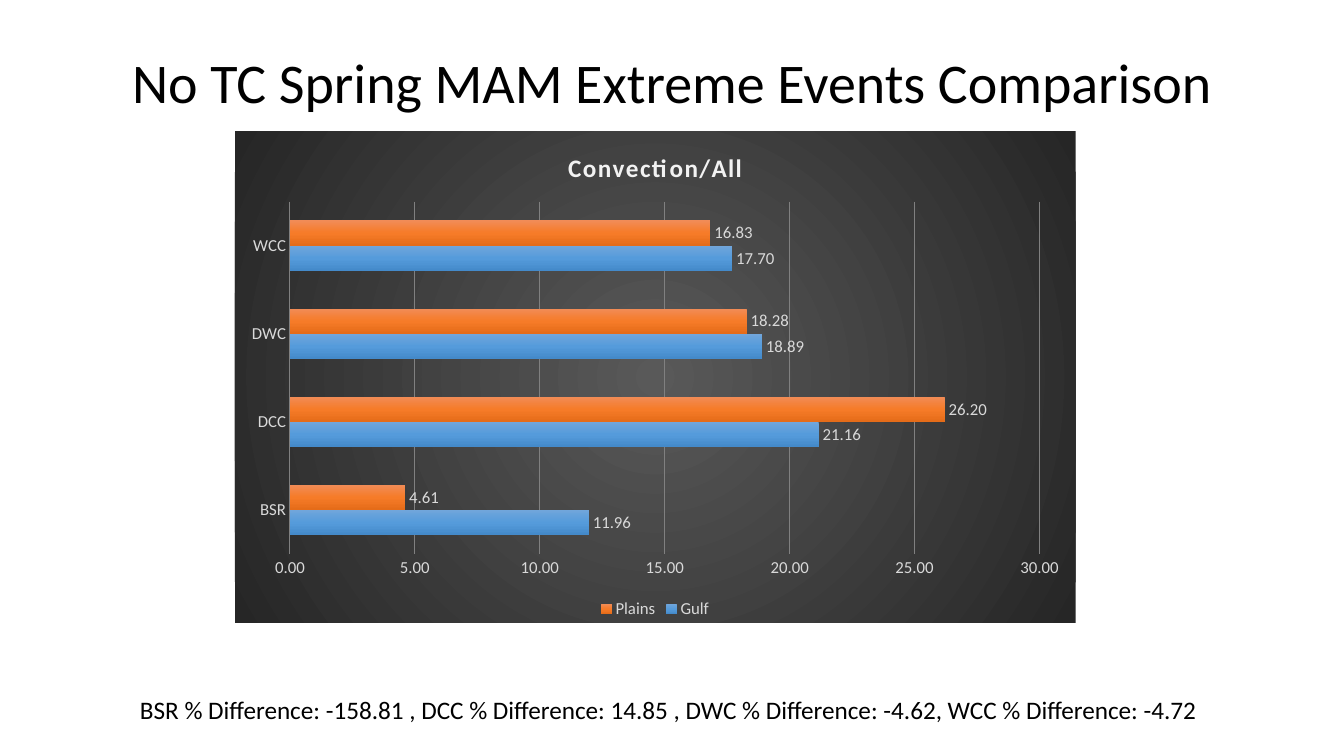
"""Build a slide comparing extreme spring events for Gulf and Plains."""
from dataclasses import dataclass

from lxml import etree
from pptx import Presentation
from pptx.chart import data as cd
from pptx.dml.color import RGBColor
from pptx.enum import chart as ce, text as te
from pptx.oxml import ns, parse_xml
from pptx.util import Pt

FONT = "Calibri"
LIGHT = "D9D9D9"
CATEGORIES = ("BSR", "DCC", "DWC", "WCC")
LINEAR = '<a:lin ang="5400000" scaled="0"/>'
RADIAL = '<a:path path="circle"><a:fillToRect l="50000" t="50000" r="50000" b="50000"/></a:path>'


@dataclass
class Region:
    name: str
    values: tuple[float, ...]
    colors: tuple[str, ...]


REGIONS = (
    Region("Gulf", (11.96, 21.16, 18.89, 17.70), ("71A6DB", "559BDB", "448ACA")),
    Region("Plains", (4.61, 26.20, 18.28, 16.83), ("F18C57", "F67B28", "E56C19")),
)


def color(value: str) -> RGBColor:
    return RGBColor.from_string(value)


def set_font(font, size: float, value: str, bold: bool = False) -> None:
    font.name, font.size, font.bold = FONT, Pt(size), bold
    font.color.rgb = color(value)


def gradient(colors: tuple[str, ...], direction: str) -> etree._Element:
    step = 100000 // (len(colors) - 1)
    stops = "".join(f'<a:gs pos="{i * step}"><a:srgbClr val="{c}"/></a:gs>'
                    for i, c in enumerate(colors))
    return parse_xml(f'<a:gradFill {ns.nsdecls("a")} rotWithShape="1">'
                     f'<a:gsLst>{stops}</a:gsLst>{direction}</a:gradFill>')


def add_text(s, text: str, *, left: float, top: float, width: float, height: float,
             size: float, align=te.PP_ALIGN.LEFT, anchor=te.MSO_ANCHOR.TOP,
             wrap: bool = True, spacing: float = 1.0) -> None:
    tf = s.shapes.add_textbox(Pt(left), Pt(top), Pt(width), Pt(height)).text_frame
    tf.word_wrap, tf.vertical_anchor = wrap, anchor
    p = tf.paragraphs[0]
    p.alignment, p.line_spacing = align, spacing
    r = p.add_run()
    r.text = text
    set_font(r.font, size, "000000")


def style_axis(axis) -> None:
    axis.major_tick_mark = axis.minor_tick_mark = ce.XL_TICK_MARK.NONE
    axis.format.line.fill.background()
    set_font(axis.tick_labels.font, 12, LIGHT)


def add_title(chart, text: str) -> None:
    chart.has_title = True
    r = chart.chart_title.text_frame.paragraphs[0].add_run()
    r.text = text
    set_font(r.font, 18, "F2F2F2", bold=True)
    r.font._element.set("spc", "100")


def style_series(series, region: Region) -> None:
    series.format.line.fill.background()
    bar = series._element.find(ns.qn("c:spPr"))
    bar.insert(0, gradient(region.colors, LINEAR))
    labels = series.data_labels
    labels.show_value = True
    labels.number_format, labels.number_format_is_linked = "0.00", False
    labels.position = ce.XL_LABEL_POSITION.OUTSIDE_END
    set_font(labels.font, 12, LIGHT)


def add_bars(s) -> None:
    data = cd.CategoryChartData(number_format="0.00")
    data.categories = CATEGORIES
    for region in REGIONS:
        data.add_series(region.name, region.values)
    chart = s.shapes.add_chart(ce.XL_CHART_TYPE.BAR_CLUSTERED, Pt(167.8), Pt(93.6),
                               Pt(600.5), Pt(351.4), data).chart
    set_font(chart.font, 10, "000000")
    area = parse_xml(f'<c:spPr {ns.nsdecls("c", "a")}><a:ln><a:noFill/></a:ln></c:spPr>')
    area.insert(0, gradient(("595959", "262626"), RADIAL))
    chart.element.find(ns.qn("c:chart")).addnext(area)
    add_title(chart, "Convection/All")

    plot = chart.plots[0]
    plot.gap_width, plot.overlap, plot.vary_by_categories = 150, 0, False
    for series, region in zip(plot.series, REGIONS):
        style_series(series, region)

    axis = chart.value_axis
    style_axis(chart.category_axis)
    style_axis(axis)
    axis.minimum_scale, axis.maximum_scale, axis.major_unit = 0, 30, 5
    axis.tick_labels.number_format = "0.00"
    axis.tick_labels.number_format_is_linked = False
    grid = axis.major_gridlines.format.line
    grid.width, grid.color.rgb = Pt(0.75), color("808080")

    chart.has_legend = True
    chart.legend.position = ce.XL_LEGEND_POSITION.BOTTOM
    chart.legend.include_in_layout = False
    set_font(chart.legend.font, 12, LIGHT)


def main() -> None:
    prs = Presentation()
    prs.slide_width, prs.slide_height = Pt(960), Pt(540)
    s = prs.slides.add_slide(prs.slide_layouts[6])
    add_text(s, "No TC Spring MAM Extreme Events Comparison", left=66, top=28.8,
             width=828, height=64.8, size=40, align=te.PP_ALIGN.CENTER,
             anchor=te.MSO_ANCHOR.MIDDLE, spacing=0.9)
    add_bars(s)
    add_text(s, "BSR % Difference: -158.81 , DCC % Difference: 14.85 , "
             "DWC % Difference: -4.62, WCC % Difference: -4.72",
             left=92.9, top=492.5, width=784.8, height=28.8, size=18, wrap=False)
    prs.save("out.pptx")


if __name__ == "__main__":
    main()
